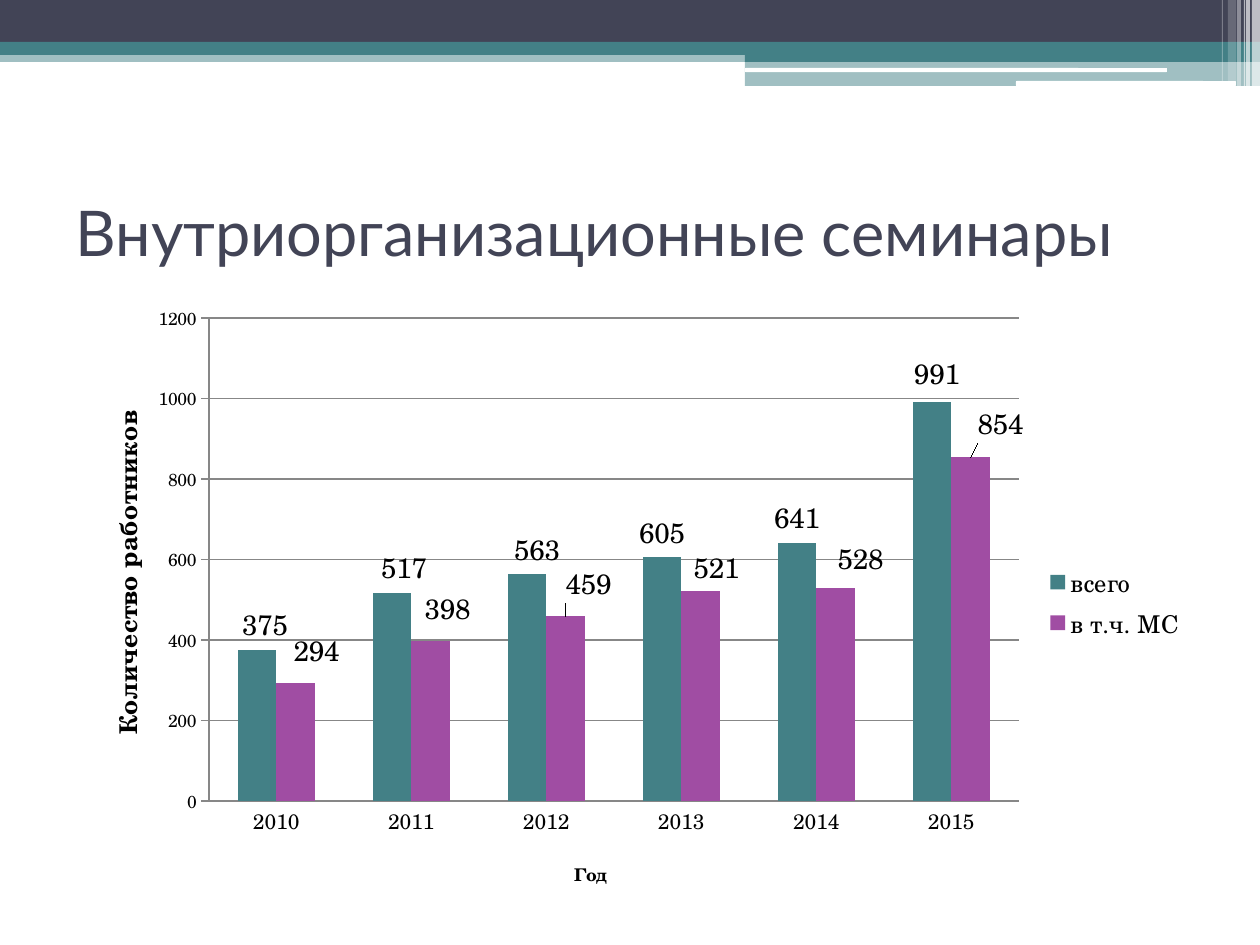
from dataclasses import dataclass

from lxml import etree
from pptx import Presentation
from pptx.chart.data import CategoryChartData
from pptx.dml.color import RGBColor
from pptx.enum.chart import (XL_CHART_TYPE, XL_LABEL_POSITION,
                             XL_LEGEND_POSITION, XL_TICK_MARK)
from pptx.enum.shapes import MSO_SHAPE
from pptx.enum.text import MSO_ANCHOR, PP_ALIGN
from pptx.oxml.ns import qn
from pptx.util import Pt

RECT, ROUND = MSO_SHAPE.RECTANGLE, MSO_SHAPE.ROUNDED_RECTANGLE
ABOVE = XL_LABEL_POSITION.OUTSIDE_END
NONE, OUT = XL_TICK_MARK.NONE, XL_TICK_MARK.OUTSIDE
PX = 914400 // 126


@dataclass(frozen=True)
class Theme:
    dark: str = "424456"
    teal: str = "438086"
    plum: str = "A04DA3"
    white: str = "FFFFFF"
    black: str = "000000"
    grid: str = "878787"
    head: str = "Lato"
    body: str = "TeX Gyre Schola"
    title: int = 36
    label: int = 16
    key: int = 14
    cat: int = 12
    small: int = 10


T = Theme()

TITLE = "Внутриорганизационные семинары"
TITLE_BOX = (63, 157, 1134, 148)

# shape, box in px, colour, opacity in percent
BANDS = [
    (RECT, (0, 50, 1260, 12), T.teal, 50),
    (RECT, (0, 0, 1260, 42), T.dark, 100),
    (RECT, (0, 42, 1260, 13), T.teal, 100),
    (RECT, (745, 49, 515, 13), T.teal, 100),
    (RECT, (745, 61, 515, 25), T.teal, 50),
    (ROUND, (745, 68, 422, 4), T.white, 100),
    (ROUND, (1016, 81, 220, 5), T.white, 100),
]
# left, width, height, opacity of the white stripes in the corner
STRIPES = [(1252, 8, 86, 65), (1246, 4, 86, 65), (1244, 1, 86, 60),
           (1237, 4, 86, 40), (1228, 8, 81, 20), (1222, 1, 81, 30)]

YEARS = ["2010", "2011", "2012", "2013", "2014", "2015"]
# name, colour, values, label shifts in px by point
SERIES = [
    ("всего", T.teal, (375, 517, 563, 605, 641, 991),
     {0: (8, 0), 1: (12, 0), 2: (10, 0), 5: (5, -4)}),
    ("в т.ч. МС", T.plum, (294, 398, 459, 521, 528, 854),
     {0: (21, -7), 1: (17, -7), 2: (23, -8),
      3: (16, 1), 4: (25, -5), 5: (30, -9)}),
]
CHART_BOX = (63, 294, 1134, 612)
PLOT_BOX = (209, 318, 810, 483)
KEY_BOX = (1040, 560, 150, 85)
X_TITLE, X_AT = "Год", (571, 857)
Y_TITLE, Y_AT = "Количество работников", (101, 407)


def rgb(code):
    return RGBColor.from_string(code)


def emu(box):
    return [v * PX for v in box]


def style(font, size, color=T.black, name=T.body, bold=False):
    font.size, font.name, font.bold = Pt(size), name, bold
    font.color.rgb = rgb(color)


def add_band(slide, kind, box, color, alpha):
    band = slide.shapes.add_shape(kind, *emu(box))
    band.shadow.inherit = False
    band.fill.solid()
    band.fill.fore_color.rgb = rgb(color)
    band.line.fill.background()
    if alpha < 100:
        tint = band.fill._xPr.find(".//" + qn("a:srgbClr"))
        etree.SubElement(tint, qn("a:alpha"), val=str(alpha * 1000))


def set_layout(node, after, **vals):
    """Give a chart part a manual layout, placed behind the named child."""
    for old in node.findall(qn("c:layout")):
        node.remove(old)
    layout = etree.Element(qn("c:layout"))
    manual = etree.SubElement(layout, qn("c:manualLayout"))
    for key, val in vals.items():
        text = val if isinstance(val, str) else f"{val:.4f}"
        etree.SubElement(manual, qn("c:" + key), val=text)
    prior = node.find(qn("c:" + after)) if after else None
    node.insert(0 if prior is None else node.index(prior) + 1, layout)


def place(node, after, box, **extra):
    """Put a chart part at a box or point given in slide px."""
    left, top, wide, high = CHART_BOX
    vals = {"x": (box[0] - left) / wide, "y": (box[1] - top) / high}
    if len(box) == 4:
        vals.update(w=box[2] / wide, h=box[3] / high)
    set_layout(node, after, **extra, xMode="edge", yMode="edge", **vals)


def set_axis(axis, title, at, size, title_size, tick):
    axis.major_tick_mark, axis.minor_tick_mark = tick, NONE
    axis.format.line.color.rgb = rgb(T.grid)
    style(axis.tick_labels.font, size)
    head = axis.axis_title
    head.text_frame.text = title
    style(head.text_frame.paragraphs[0].runs[0].font, title_size, bold=True)
    place(head._element, "tx", at)


def set_labels(series, shifts):
    labels = series.data_labels
    labels.show_value, labels.position = True, ABOVE
    style(labels.font, T.label)
    for idx in shifts:
        label = series.points[idx].data_label
        label.position = ABOVE
        style(label.font, T.label)
    for node in series._element.iter(qn("c:dLbl")):
        dx, dy = shifts[int(node.find(qn("c:idx")).get("val"))]
        set_layout(node, "idx", x=dx / CHART_BOX[2], y=dy / CHART_BOX[3])


def add_chart(slide):
    data = CategoryChartData()
    data.categories = YEARS
    for name, _, vals, _ in SERIES:
        data.add_series(name, vals)
    chart = slide.shapes.add_chart(
        XL_CHART_TYPE.COLUMN_CLUSTERED, *emu(CHART_BOX), data).chart
    chart.has_title = False
    style(chart.font, T.small)

    plot = chart.plots[0]
    plot.gap_width, plot.overlap, plot.vary_by_categories = 150, 0, False
    for series, (_, color, _, shifts) in zip(plot.series, SERIES):
        series.format.fill.solid()
        series.format.fill.fore_color.rgb = rgb(color)
        set_labels(series, shifts)
    area = chart._chartSpace.find(".//" + qn("c:plotArea"))
    place(area, None, PLOT_BOX, layoutTarget="inner")

    set_axis(chart.category_axis, X_TITLE, X_AT, T.cat, T.small, NONE)
    axis = chart.value_axis
    set_axis(axis, Y_TITLE, Y_AT, T.small, T.key, OUT)
    axis.minimum_scale, axis.maximum_scale, axis.major_unit = 0, 1200, 200
    axis.major_gridlines.format.line.color.rgb = rgb(T.grid)

    chart.has_legend = True
    legend = chart.legend
    legend.position = XL_LEGEND_POSITION.RIGHT
    legend.include_in_layout = False
    style(legend.font, T.key)
    place(legend._element, "legendPos", KEY_BOX)


def add_title(slide):
    title = slide.shapes.title
    title.left, title.top, title.width, title.height = emu(TITLE_BOX)
    frame = title.text_frame
    frame.text = TITLE
    frame.vertical_anchor = MSO_ANCHOR.MIDDLE
    line = frame.paragraphs[0]
    line.alignment = PP_ALIGN.LEFT
    style(line.runs[0].font, T.title, T.dark, T.head)


def main():
    deck = Presentation()
    deck.slide_width, deck.slide_height = emu((1260, 945))
    slide = deck.slides.add_slide(deck.slide_layouts[5])
    for band in BANDS:
        add_band(slide, *band)
    for left, wide, high, alpha in STRIPES:
        add_band(slide, RECT, (left, 0, wide, high), T.white, alpha)
    add_title(slide)
    add_chart(slide)
    deck.save("out.pptx")


if __name__ == "__main__":
    main()
